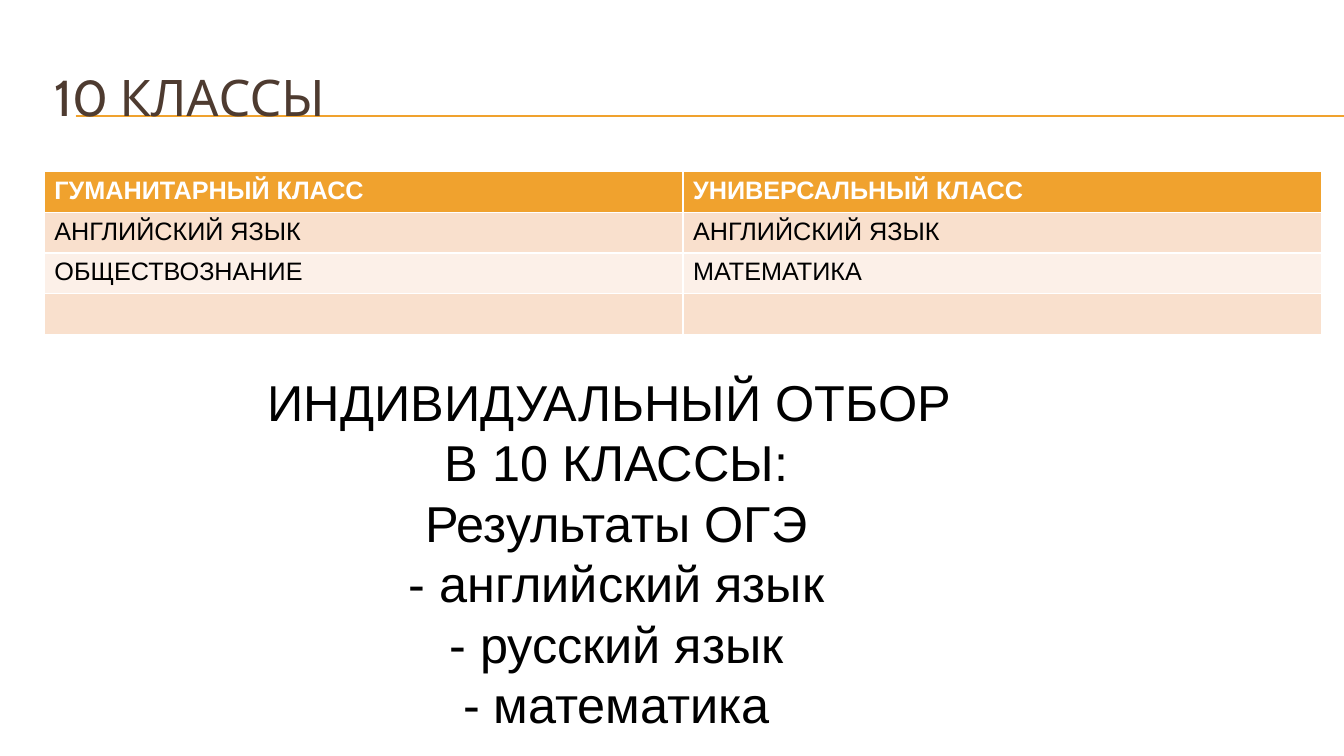
"""Build the slide on the tenth-grade classes and their selection rules."""
from pptx import Presentation
from pptx.dml.color import RGBColor
from pptx.enum.shapes import MSO_CONNECTOR
from pptx.enum.text import MSO_ANCHOR, MSO_AUTO_SIZE, PP_ALIGN
from pptx.oxml.ns import qn
from pptx.util import Inches, Pt
from lxml.etree import SubElement

TITLE = "10 КЛАССЫ"
CLASSES = [
    ("ГУМАНИТАРНЫЙ КЛАСС", "УНИВЕРСАЛЬНЫЙ КЛАСС"),
    ("АНГЛИЙСКИЙ ЯЗЫК", "АНГЛИЙСКИЙ ЯЗЫК"),
    ("ОБЩЕСТВОЗНАНИЕ", "МАТЕМАТИКА"),
    ("", ""),
]
RULES = [
    "ИНДИВИДУАЛЬНЫЙ ОТБОР ",
    "В 10 КЛАССЫ:",
    "Результаты ОГЭ",
    "- английский язык",
    "- русский язык",
    "- математика",
]
WIDE, HIGH = 13.33, 7.5
LEFT, SPAN = 0.44, 12.67
ROW = 0.405
GOLD, BANDS = "F0A22E", ("FCF0E8", "F9E0CD")


def color(code):
    return RGBColor.from_string(code)


def style(para, size, face, code, bold=False, align=PP_ALIGN.LEFT):
    para.alignment = align
    for run in para.runs:
        font = run.font
        font.size, font.name, font.bold = Pt(size), face, bold
        font.color.rgb = color(code)


def add_rule(slide, y):
    line = slide.shapes.add_connector(
        MSO_CONNECTOR.STRAIGHT, Inches(0.75), Inches(y), Inches(WIDE), Inches(y))
    line.line.color.rgb = color(GOLD)
    line.line.width = Pt(0.75)
    SubElement(line.element.spPr, qn("a:effectLst"))


def add_title(slide):
    title = slide.shapes.title
    title.left, title.top = Inches(LEFT), Inches(0.5)
    title.width, title.height = Inches(SPAN), Inches(0.92)
    frame = title.text_frame
    frame.text = TITLE
    frame.auto_size = MSO_AUTO_SIZE.NONE
    frame.vertical_anchor = MSO_ANCHOR.MIDDLE
    style(frame.paragraphs[0], 36, "Cabin", "4E3B30")
    title.element.getparent().append(title.element)


def add_classes(slide):
    count = len(CLASSES)
    table = slide.shapes.add_table(
        count, len(CLASSES[0]), Inches(LEFT), Inches(1.7),
        Inches(SPAN), Inches(ROW * count)).table
    for r, names in enumerate(CLASSES):
        head = r == 0
        for c, name in enumerate(names):
            cell = table.cell(r, c)
            cell.text = name
            cell.fill.solid()
            cell.fill.fore_color.rgb = color(GOLD if head else BANDS[r % 2])
            style(cell.text_frame.paragraphs[0], 18, "Arial",
                  "FFFFFF" if head else "000000", head)


def add_rules(slide):
    box = slide.shapes.add_textbox(
        Inches(1.97), Inches(3.63), Inches(8.29), Inches(3.74))
    frame = box.text_frame
    frame.word_wrap = True
    frame.text = "\n".join(RULES)
    for para in frame.paragraphs:
        style(para, 36, "Arial", "000000", align=PP_ALIGN.CENTER)


def main():
    deck = Presentation()
    deck.slide_width, deck.slide_height = Inches(WIDE), Inches(HIGH)
    slide = deck.slides.add_slide(deck.slide_layouts[5])
    for y in (1.15, 1.16):
        add_rule(slide, y)
    add_title(slide)
    add_classes(slide)
    add_rules(slide)
    deck.save("out.pptx")


if __name__ == "__main__":
    main()
